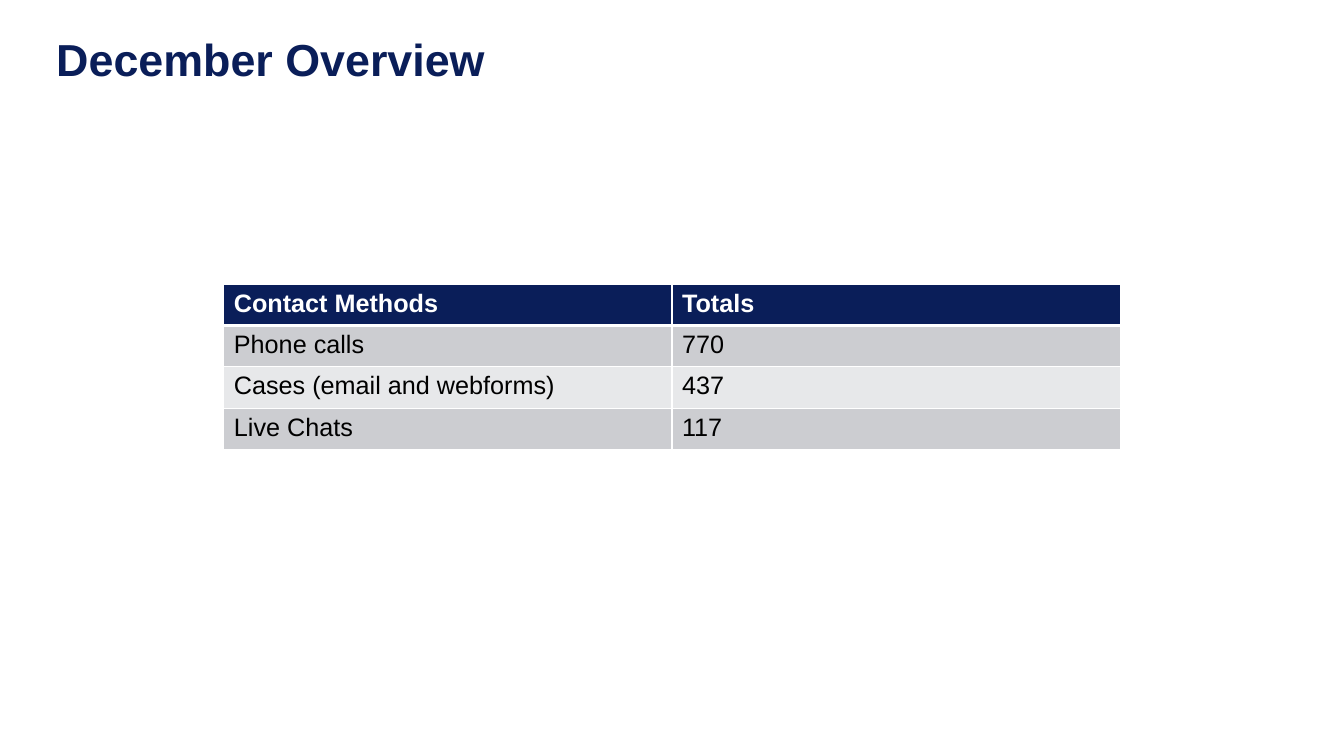
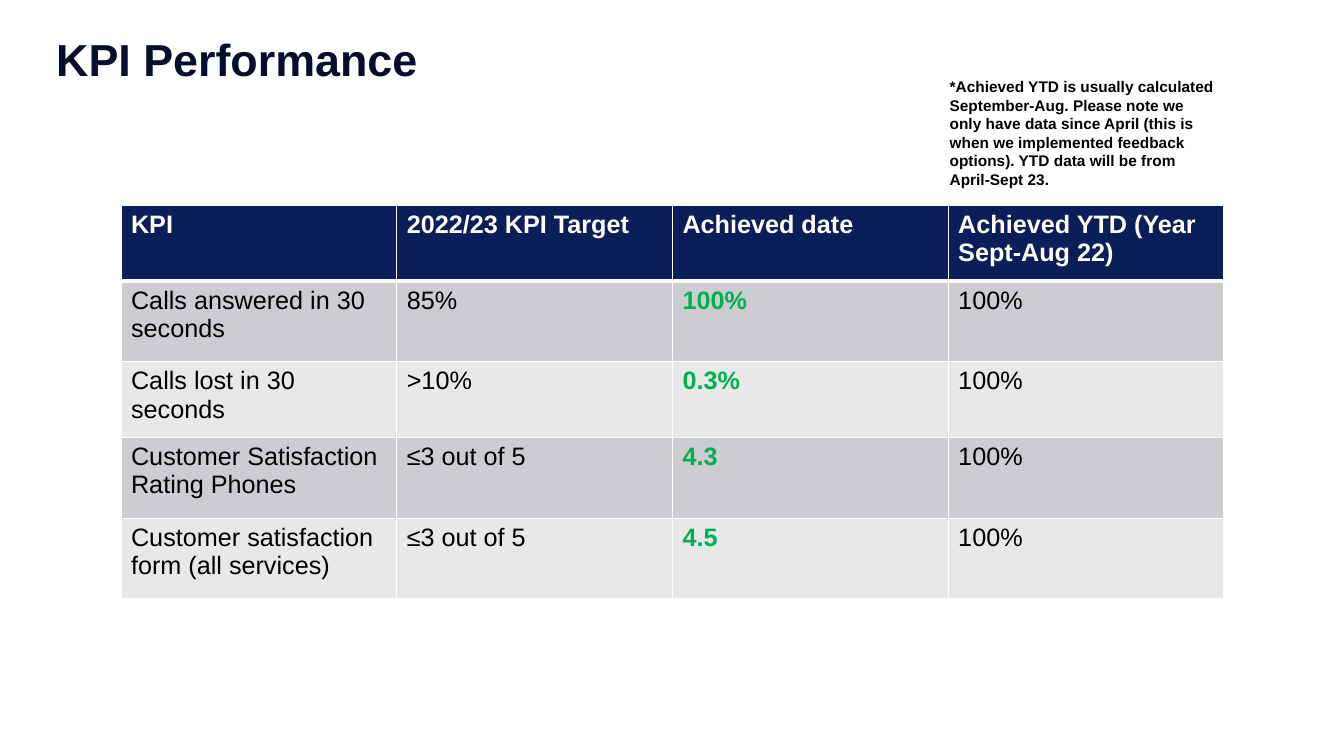
from dataclasses import dataclass

from lxml import etree
from pptx import Presentation
from pptx.dml.color import RGBColor
from pptx.enum import text
from pptx.oxml import ns
from pptx.util import Inches, Pt


@dataclass(frozen=True)
class Theme:
    font: str = "Arial"
    navy: str = "0A1E59"
    dark_navy: str = "050F2C"
    white: str = "FFFFFF"
    black: str = "000000"
    green: str = "00B050"
    bands: tuple = ("CCCDD1", "E7E8EA")
    title_size: int = 32
    table_size: int = 18
    note_size: int = 11
    rule: int = 1
    header_rule: int = 3


THEME = Theme()

CONTACTS = [
    ("Contact Methods", "Totals"),
    ("Phone calls", "770"),
    ("Cases (email and webforms)", "437"),
    ("Live Chats", "117"),
]
KPIS = [
    ("KPI", "2022/23 KPI Target", "Achieved date", "Achieved YTD (Year Sept-Aug 22)"),
    ("Calls answered in 30 seconds", "85%", "100%", "100%"),
    ("Calls lost in 30 seconds", ">10%", "0.3%", "100%"),
    ("Customer Satisfaction Rating Phones", "≤3 out of 5", "4.3", "100%"),
    ("Customer satisfaction form (all services)", "≤3 out of 5", "4.5", "100%"),
]
YTD_NOTE = (
    "*Achieved YTD is usually calculated September-Aug. Please note we only have "
    "data since April (this is when we implemented feedback options). YTD data "
    "will be from April-Sept 23."
)


def write(tf, content, size, color, bold=False, spacing=None):
    p = tf.paragraphs[0]
    p.line_spacing = spacing
    r = p.add_run()
    r.text = content
    r.font.name = THEME.font
    r.font.size = Pt(size)
    r.font.bold = bold
    r.font.color.rgb = RGBColor.from_string(color)


def add_text(slide, content, box, anchor=text.MSO_ANCHOR.TOP, **style):
    sp = slide.shapes.add_textbox(*map(Inches, box))
    tf = sp.text_frame
    tf.word_wrap = True
    tf.vertical_anchor = anchor
    write(tf, content, **style)


def add_title(slide, content, color):
    add_text(slide, content, (0.46, 0.3, 11.44, 0.6), text.MSO_ANCHOR.BOTTOM,
             size=THEME.title_size, color=color, bold=True, spacing=0.9)


def set_borders(cell, **widths):
    tcPr = cell._tc.get_or_add_tcPr()
    for side in "LRTB":
        width = widths.get(side, THEME.rule)
        ln = etree.SubElement(tcPr, ns.qn(f"a:ln{side}"), w=str(Pt(width)))
        fill = etree.SubElement(ln, ns.qn("a:solidFill"))
        etree.SubElement(fill, ns.qn("a:srgbClr"), val=THEME.white)


def format_cell(cell, content, row, highlighted):
    if row == 0:
        fill, color, bold = THEME.navy, THEME.white, True
        set_borders(cell, B=THEME.header_rule)
    else:
        fill = THEME.bands[(row - 1) % 2]
        color = THEME.green if highlighted else THEME.black
        bold = highlighted
        set_borders(cell, T=THEME.header_rule if row == 1 else THEME.rule)
    cell.fill.solid()
    cell.fill.fore_color.rgb = RGBColor.from_string(fill)
    write(cell.text_frame, content, THEME.table_size, color, bold)


def add_table(slide, rows, left, top, width, heights, highlight=None):
    n_cols = len(rows[0])
    table = slide.shapes.add_table(
        len(rows), n_cols, Inches(left), Inches(top),
        Inches(width), Inches(sum(heights))).table
    for col in table.columns:
        col.width = Inches(width / n_cols)
    for i, (values, height) in enumerate(zip(rows, heights)):
        table.rows[i].height = Inches(height)
        for j, value in enumerate(values):
            format_cell(table.cell(i, j), value, i, j == highlight)


def add_slide(prs, title, color):
    slide = prs.slides.add_slide(prs.slide_layouts[6])
    add_title(slide, title, color)
    return slide


def main():
    prs = Presentation()
    prs.slide_width, prs.slide_height = Inches(13.33), Inches(7.5)

    overview = add_slide(prs, "December Overview", THEME.navy)
    add_table(overview, CONTACTS, 2.22, 2.82, 8.89, [0.41] * len(CONTACTS))

    kpi = add_slide(prs, "KPI Performance", THEME.dark_navy)
    add_table(kpi, KPIS, 1.2, 2.04, 10.94, [0.75, 0.8, 0.75, 0.8, 0.8], highlight=2)
    add_text(kpi, YTD_NOTE, (9.32, 0.72, 2.82, 1.03),
             size=THEME.note_size, color=THEME.black, bold=True)

    prs.save("out.pptx")


if __name__ == "__main__":
    main()
